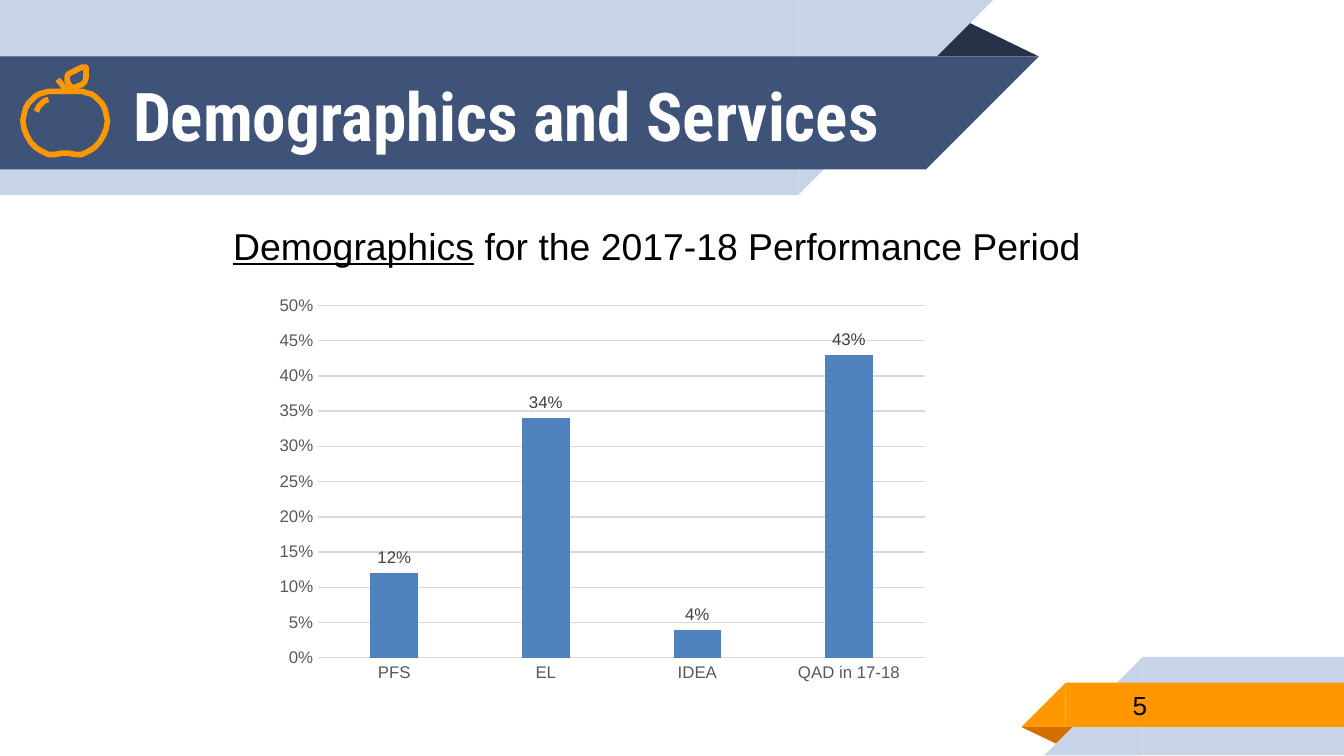
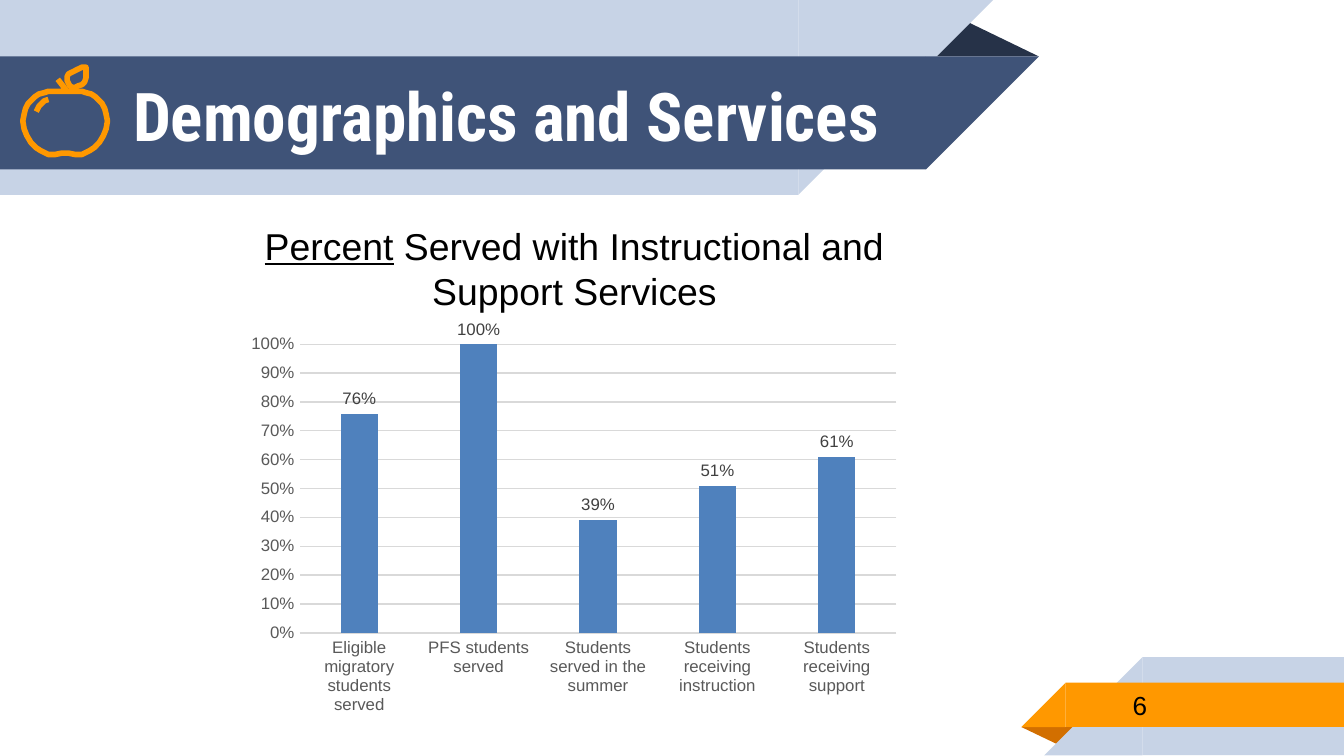
"""Build two slides of demographics and services column charts."""
import pptx
import pptx.chart.data
import pptx.dml.color
import pptx.enum.chart
import pptx.enum.shapes
import pptx.enum.text
import pptx.util

Inches = pptx.util.Inches
Pt = pptx.util.Pt
RGBColor = pptx.dml.color.RGBColor
MSO_SHAPE = pptx.enum.shapes.MSO_SHAPE
PP_ALIGN = pptx.enum.text.PP_ALIGN
MSO_ANCHOR = pptx.enum.text.MSO_ANCHOR
MSO_AUTO_SIZE = pptx.enum.text.MSO_AUTO_SIZE
XL = pptx.enum.chart

NAVY = RGBColor(0x3F, 0x53, 0x78)
DARK = RGBColor(0x26, 0x32, 0x48)
PALE = RGBColor(0xC7, 0xD3, 0xE6)
ORANGE = RGBColor(0xFF, 0x98, 0x00)
RUST = RGBColor(0xD2, 0x6F, 0x00)
BLUE = RGBColor(0x4F, 0x81, 0xBD)
GRID = RGBColor(0xD9, 0xD9, 0xD9)
AXIS_GREY = RGBColor(0x59, 0x59, 0x59)
LABEL_GREY = RGBColor(0x40, 0x40, 0x40)
BLACK = RGBColor(0, 0, 0)
WHITE = RGBColor(0xFF, 0xFF, 0xFF)

TITLE_FONT = {"name": "Roboto Condensed", "size": Pt(36), "bold": True}
NUMBER_FONT = {"name": "Arial", "size": Pt(14)}
HEADING_FONT = {"name": "Arial", "size": Pt(20)}
CHART_FONT = {"name": "Arial", "size": Pt(10)}
SMALL_FONT = {"name": "Arial", "size": Pt(9)}
PADDED_FRAME = {
    "margin_left": Inches(0.1), "margin_right": Inches(0.1),
    "margin_top": Inches(0.1), "margin_bottom": Inches(0.1),
    "vertical_anchor": MSO_ANCHOR.MIDDLE, "word_wrap": True,
    "auto_size": MSO_AUTO_SIZE.NONE,
}
PERCENT = {"number_format": "0%", "number_format_is_linked": False}

BANDS = [
    (MSO_SHAPE.ISOSCELES_TRIANGLE, (6.88, 0.14, 0.85, 0.28), 0, DARK),
    (MSO_SHAPE.RECTANGLE, (0, 0, 5.94, 1.45), 0, PALE),
    (MSO_SHAPE.RIGHT_TRIANGLE, (5.94, 0, 1.45, 1.45), 90, PALE),
    (MSO_SHAPE.RECTANGLE, (0, 0.42, 6.89, 0.84), 0, NAVY),
    (MSO_SHAPE.RIGHT_TRIANGLE, (6.89, 0.42, 0.84, 0.84), 90, NAVY),
    (MSO_SHAPE.ISOSCELES_TRIANGLE, (7.6, 5.41, 0.43, 0.14), 180, RUST),
    (MSO_SHAPE.RECTANGLE, (8.5, 4.89, 1.5, 0.73), 0, PALE),
    (MSO_SHAPE.RIGHT_TRIANGLE, (7.77, 4.89, 0.73, 0.73), 270, PALE),
    (MSO_SHAPE.RECTANGLE, (7.93, 5.08, 2.07, 0.33), 0, ORANGE),
    (MSO_SHAPE.RIGHT_TRIANGLE, (7.6, 5.08, 0.33, 0.33), 270, ORANGE),
]

APPLE_UNIT = Inches(0.01)
LEAF = [(51, 55), (53, 54), (55, 53), (57, 52), (61, 50), (64, 50), (64, 58),
        (63, 61), (61, 63), (58, 64), (56, 65), (54, 65), (52, 64), (51, 62),
        (50, 60), (50, 57), (51, 55)]
LEFT_HALF = [(46, 68), (36, 68), (33, 69), (29, 70), (26, 72), (24, 74),
             (21, 77), (19, 81), (18, 85), (17, 90), (18, 96), (20, 101),
             (23, 106), (27, 110), (30, 112), (34, 114), (36, 115),
             (41, 115), (46, 114)]
RIGHT_HALF = [(97 - x, y) for x, y in reversed(LEFT_HALF)]
BODY = [(50, 68)] + LEFT_HALF + RIGHT_HALF + [(50, 68), (43, 59)]
SHINE = [(36, 74), (33, 75), (31, 77), (29, 79), (28, 81), (27, 83)]

SLIDES = [
    {"heading": ("Demographics", " for the 2017-18 Performance Period"),
     "heading_at": (1.44, 1.61, 6.9, 0.44), "chart_at": (1.98, 2.14, 5, 3),
     "max": None,
     "data": {"PFS": 0.12, "EL": 0.34, "IDEA": 0.04, "QAD in 17-18": 0.43}},
    {"heading": ("Percent", " Served with Instructional and Support Services"),
     "heading_at": (1.44, 1.61, 5.67, 0.77), "chart_at": (1.77, 2.38, 5, 3),
     "max": 1,
     "data": {"Eligible migratory students served": 0.76,
              "PFS students served": 1,
              "Students served in the summer": 0.39,
              "Students receiving instruction": 0.51,
              "Students receiving support": 0.61}},
]


def set_format(obj, values, color=None):
    for name, value in values.items():
        setattr(obj, name, value)
    if color is not None:
        obj.color.rgb = color


def inches(box):
    return [Inches(v) for v in box]


prs = pptx.Presentation()
prs.slide_width = Inches(10)
prs.slide_height = prs.slide_width * 9 // 16

for number, content in enumerate(SLIDES, start=5):
    slide = prs.slides.add_slide(prs.slide_layouts[5])
    shapes = slide.shapes

    for kind, box, rotation, color in BANDS:
        sp = shapes.add_shape(kind, *inches(box))
        sp.rotation = rotation
        sp.shadow.inherit = False
        sp.fill.solid()
        sp.fill.fore_color.rgb = color
        sp.line.fill.background()
        if kind == MSO_SHAPE.ISOSCELES_TRIANGLE:
            sp.adjustments[0] = 0.32

    title = shapes.title
    shapes._spTree.append(title._element)
    title.left, title.top, title.width, title.height = inches((0.89, 0.43, 6.01, 0.84))
    number_box = shapes.add_textbox(*inches((8.33, 5.07, 1.63, 0.35)))
    for sp, text, font, color in (
        (title, "Demographics and Services", TITLE_FONT, WHITE),
        (number_box, str(number), NUMBER_FONT, BLACK),
    ):
        tf = sp.text_frame
        set_format(tf, PADDED_FRAME)
        p = tf.paragraphs[0]
        p.alignment = PP_ALIGN.LEFT
        r = p.add_run()
        r.text = text
        set_format(r.font, font, color)

    tf = shapes.add_textbox(*inches(content["heading_at"])).text_frame
    set_format(tf, {"word_wrap": True, "auto_size": MSO_AUTO_SIZE.SHAPE_TO_FIT_TEXT})
    p = tf.paragraphs[0]
    p.alignment = PP_ALIGN.CENTER
    for text, underline in zip(content["heading"], (True, False)):
        r = p.add_run()
        r.text = text
        set_format(r.font, {**HEADING_FONT, "underline": underline}, BLACK)

    for points in (LEAF, BODY, SHINE):
        builder = shapes.build_freeform(*points[0], scale=APPLE_UNIT)
        builder.add_line_segments(points[1:], close=points is LEAF)
        sp = builder.convert_to_shape()
        sp.shadow.inherit = False
        sp.fill.background()
        set_format(sp.line, {"width": Pt(3)}, ORANGE)

    data = pptx.chart.data.CategoryChartData(number_format="0%")
    data.categories = list(content["data"])
    data.add_series("Series 1", list(content["data"].values()))
    chart = shapes.add_chart(XL.XL_CHART_TYPE.COLUMN_CLUSTERED,
                             *inches(content["chart_at"]), data).chart
    set_format(chart, {"has_legend": False, "has_title": False})
    set_format(chart.font, CHART_FONT, BLACK)

    plot = chart.plots[0]
    set_format(plot, {"gap_width": 219, "overlap": -27,
                      "vary_by_categories": False, "has_data_labels": True})
    fill = plot.series[0].format.fill
    fill.solid()
    fill.fore_color.rgb = BLUE
    labels = plot.data_labels
    set_format(labels, {**PERCENT, "show_value": True,
                        "position": XL.XL_LABEL_POSITION.OUTSIDE_END})
    set_format(labels.font, SMALL_FONT, LABEL_GREY)

    cat_axis, val_axis = chart.category_axis, chart.value_axis
    for axis in (cat_axis, val_axis):
        set_format(axis, {"major_tick_mark": XL.XL_TICK_MARK.NONE,
                          "minor_tick_mark": XL.XL_TICK_MARK.NONE})
        set_format(axis.tick_labels.font, SMALL_FONT, AXIS_GREY)
    val_axis.has_major_gridlines = True
    val_axis.maximum_scale = content["max"]
    set_format(val_axis.tick_labels, PERCENT)
    val_axis.format.line.fill.background()
    for line in (cat_axis.format.line, val_axis.major_gridlines.format.line):
        set_format(line, {"width": Pt(0.75)}, GRID)

prs.save("out.pptx")
